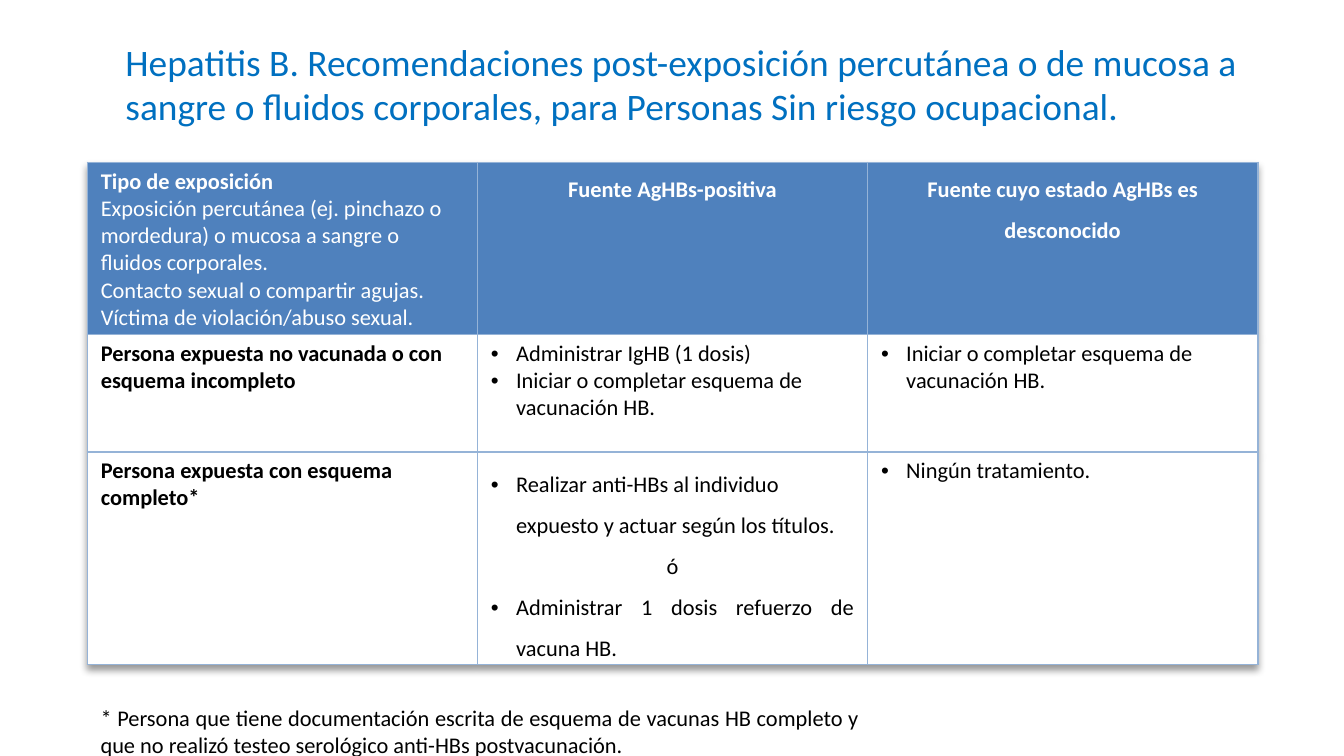
from dataclasses import dataclass

from lxml import etree
from pptx import Presentation
from pptx.dml.color import RGBColor
from pptx.enum import text as t
from pptx.oxml import ns
from pptx.util import Pt

FONT = "Calibri"
BLUE, HEADER, BORDER = "0070C0", "4F81BD", "95B3D7"
WHITE, BLACK = "FFFFFF", "000000"
LEFT, CENTER, JUSTIFY = (t.PP_ALIGN.LEFT, t.PP_ALIGN.CENTER, t.PP_ALIGN.JUSTIFY)
INDENT = 13.5


@dataclass
class Line:
    text: str
    bold: bool = False
    bullet: bool = False
    align: t.PP_ALIGN = LEFT
    spacing: float = 1.0


@dataclass
class Cell:
    lines: list[Line]
    margins: tuple[float, float] = (7.2, 2.88)


def rgb(color: str) -> RGBColor:
    return RGBColor.from_string(color)


def child(parent, tag: str, **attributes):
    return etree.SubElement(parent, ns.qn(tag), attributes)


def write(paragraph, text: str, *, size=12, color=BLACK, bold=False,
          bullet=False, align=LEFT, spacing=1.0) -> None:
    if bullet:
        properties = paragraph._p.get_or_add_pPr()
        properties.set("marL", str(Pt(INDENT)))
        properties.set("indent", str(-Pt(INDENT)))
        child(properties, "a:buFont", typeface="Arial")
        child(properties, "a:buChar", char="•")
    paragraph.alignment = align
    paragraph.line_spacing = spacing
    paragraph.space_before = Pt(0)
    run = paragraph.add_run()
    run.text = text
    run.font.name, run.font.size, run.font.bold = FONT, Pt(size), bold
    run.font.color.rgb = rgb(color)


def add_borders(cell) -> None:
    properties = cell._tc.get_or_add_tcPr()
    for position, side in enumerate(("L", "R", "T", "B")):
        border = etree.Element(ns.qn(f"a:ln{side}"), w=str(Pt(1)))
        child(child(border, "a:solidFill"), "a:srgbClr", val=BORDER)
        properties.insert(position, border)


def fill_cell(cell, content: Cell, fill: str, color: str) -> None:
    cell.fill.solid()
    cell.fill.fore_color.rgb = rgb(fill)
    add_borders(cell)
    side, top = content.margins
    cell.margin_left = cell.margin_right = Pt(side)
    cell.margin_top = cell.margin_bottom = Pt(top)
    frame = cell.text_frame
    for index, line in enumerate(content.lines):
        paragraph = frame.add_paragraph() if index else frame.paragraphs[0]
        write(paragraph, line.text, color=color, bold=line.bold, bullet=line.bullet,
              align=line.align, spacing=line.spacing)


def add_shadow(table) -> None:
    effects = etree.Element(ns.qn("a:effectLst"))
    shadow = child(effects, "a:outerShdw", blurRad=str(Pt(4)), dist=str(Pt(3)),
                   dir="5400000", algn="t", rotWithShape="0")
    child(child(shadow, "a:srgbClr", val=BLACK), "a:alpha", val="40000")
    table._tbl.tblPr.insert(0, effects)


def heading(text: str) -> Cell:
    return Cell([Line(text, bold=True, align=CENTER, spacing=1.5)], (4.32, 0))


VACCINATE = Line("Iniciar o completar esquema de vacunación HB.", bullet=True)
ROWS = [
    [Cell([Line("Tipo de exposición", bold=True),
           Line("Exposición percutánea (ej. pinchazo o mordedura) o mucosa a "
                "sangre o fluidos corporales."),
           Line("Contacto sexual o compartir agujas."),
           Line("Víctima de violación/abuso sexual.")]),
     heading("Fuente AgHBs-positiva"),
     heading("Fuente cuyo estado AgHBs es desconocido")],
    [Cell([Line("Persona expuesta no vacunada o con esquema incompleto", bold=True)]),
     Cell([Line("Administrar IgHB (1 dosis)", bullet=True), VACCINATE]),
     Cell([VACCINATE])],
    [Cell([Line("Persona expuesta con esquema completo*", bold=True)]),
     Cell([Line("Realizar anti-HBs al individuo expuesto y actuar según los títulos.",
                bullet=True, spacing=1.5),
           Line("ó", align=CENTER, spacing=1.5),
           Line("Administrar 1 dosis refuerzo de vacuna HB.",
                bullet=True, align=JUSTIFY, spacing=1.5)]),
     Cell([Line("Ningún tratamiento.", bullet=True)])],
]
ROW_HEIGHTS = [91.6, 63, 113.6]
COLUMN_WIDTH = 209


def main() -> None:
    presentation = Presentation()
    presentation.slide_width, presentation.slide_height = Pt(720), Pt(405)
    slide = presentation.slides.add_slide(presentation.slide_layouts[5])

    # Title
    title = slide.shapes.title
    title.left, title.top, title.width, title.height = Pt(60), Pt(13), Pt(613.5), Pt(63.5)
    title.text_frame.auto_size = t.MSO_AUTO_SIZE.NONE
    title.text_frame.vertical_anchor = t.MSO_ANCHOR.MIDDLE
    write(title.text_frame.paragraphs[0],
          "Hepatitis B. Recomendaciones post-exposición percutánea o de mucosa a "
          "sangre o fluidos corporales, para Personas Sin riesgo ocupacional.",
          size=20, color=BLUE)

    # Footnote
    note = slide.shapes.add_textbox(Pt(46.8), Pt(373.7), Pt(421), Pt(36))
    note.text_frame.word_wrap = True
    note.text_frame.auto_size = t.MSO_AUTO_SIZE.SHAPE_TO_FIT_TEXT
    note.text_frame.vertical_anchor = t.MSO_ANCHOR.MIDDLE
    write(note.text_frame.paragraphs[0],
          "* Persona que tiene documentación escrita de esquema de vacunas HB completo "
          "y que no realizó testeo serológico anti-HBs postvacunación.", align=JUSTIFY)

    # Recommendations table
    columns = len(ROWS[0])
    table = slide.shapes.add_table(len(ROWS), columns, Pt(46.8), Pt(87),
                                   Pt(COLUMN_WIDTH * columns), Pt(sum(ROW_HEIGHTS))).table
    table.horz_banding = False
    add_shadow(table)
    for column in table.columns:
        column.width = Pt(COLUMN_WIDTH)
    for row, (cells, height) in enumerate(zip(ROWS, ROW_HEIGHTS)):
        table.rows[row].height = Pt(height)
        fill, color = (WHITE, BLACK) if row else (HEADER, WHITE)
        for column, content in enumerate(cells):
            fill_cell(table.cell(row, column), content, fill, color)

    presentation.save("out.pptx")


if __name__ == "__main__":
    main()
